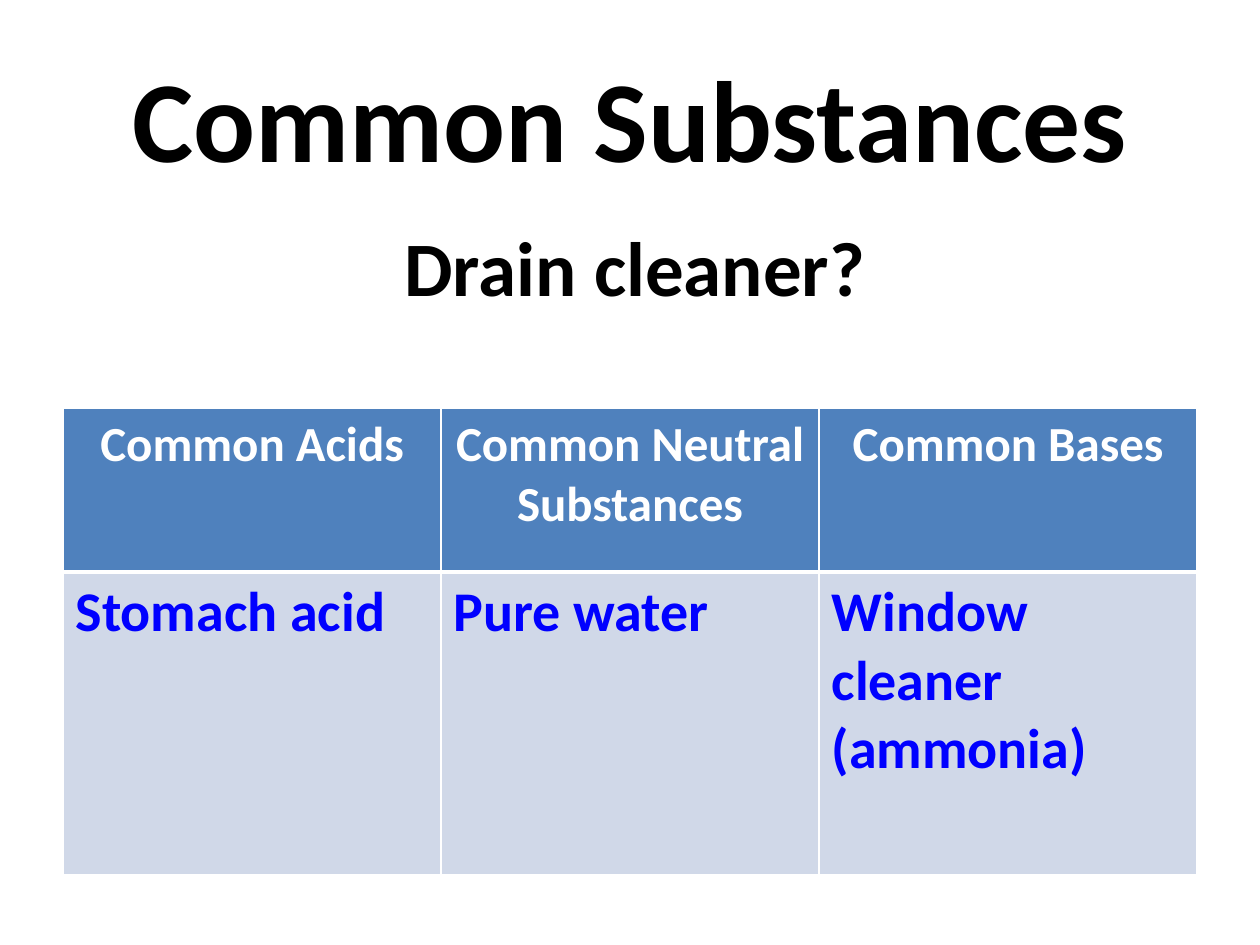
from dataclasses import dataclass

from lxml import etree
from pptx import Presentation
from pptx import util as u
from pptx.dml.color import RGBColor
from pptx.enum import text
from pptx.oxml import ns


@dataclass(frozen=True)
class Theme:
    font: str = "Calibri"
    black: str = "000000"
    white: str = "FFFFFF"
    header_fill: str = "4F81BD"
    body_fill: str = "D0D8E8"
    body_text: str = "0000FF"
    title_size: int = 66
    question_size: int = 44
    header_size: int = 28
    body_size: int = 32
    thin: int = 1
    thick: int = 3


class SlideBuilder:
    def __init__(self, slide, theme):
        self.s = slide
        self.theme = theme

    def add_words(self, tf, words, size, color, align):
        p = tf.paragraphs[0]
        p.alignment = align
        r = p.add_run()
        r.text = words
        style = {"name": self.theme.font, "size": u.Pt(size), "bold": True}
        for name, value in style.items():
            setattr(r.font, name, value)
        r.font.color.rgb = RGBColor.from_string(color)

    def text_box(self, words, at, size, **frame):
        tf = self.s.shapes.add_textbox(*map(u.Inches, at)).text_frame
        for name, value in {"word_wrap": True, **frame}.items():
            setattr(tf, name, value)
        self.add_words(tf, words, size, self.theme.black, text.PP_ALIGN.CENTER)

    def borders(self, cell, widths):
        """Draw white cell edges; widths maps L, R, T, B to points."""
        tc_pr = cell._tc.get_or_add_tcPr()
        for side, width in widths.items():
            ln = etree.SubElement(tc_pr, ns.qn(f"a:ln{side}"), w=str(u.Pt(width)))
            fill = etree.SubElement(ln, ns.qn("a:solidFill"))
            etree.SubElement(fill, ns.qn("a:srgbClr"), val=self.theme.white)

    def table(self, header, body, at, heights):
        t = self.theme
        table = self.s.shapes.add_table(2, len(header), *map(u.Inches, at)).table
        rows = (
            (header, t.header_size, t.white, t.header_fill,
             text.PP_ALIGN.CENTER, {"T": t.thin, "B": t.thick}),
            (body, t.body_size, t.body_text, t.body_fill,
             text.PP_ALIGN.LEFT, {"T": t.thick, "B": t.thin}),
        )
        for row, height, (labels, size, color, fill, align, edges) in zip(
                table.rows, heights, rows):
            row.height = u.Inches(height)
            for cell, label in zip(row.cells, labels):
                self.add_words(cell.text_frame, label, size, color, align)
                self.borders(cell, {"L": t.thin, "R": t.thin, **edges})
                cell.fill.solid()
                cell.fill.fore_color.rgb = RGBColor.from_string(fill)


def main():
    prs = Presentation()
    prs.slide_width, prs.slide_height = u.Inches(10), u.Inches(7.5)
    theme = Theme()
    slide = SlideBuilder(prs.slides.add_slide(prs.slide_layouts[6]), theme)

    slide.text_box("Common Substances", (0.5, 0.3, 9, 1.25), theme.title_size,
                   vertical_anchor=text.MSO_ANCHOR.MIDDLE)
    slide.table(
        ("Common Acids", "Common Neutral Substances", "Common Bases"),
        ("Stomach acid", "Pure water", "Window cleaner (ammonia)"),
        (0.5, 3.24, 9, 3.7), (1.3, 2.4))
    slide.text_box("Drain cleaner?", (2.42, 1.69, 5.24, 0.84), theme.question_size,
                   auto_size=text.MSO_AUTO_SIZE.SHAPE_TO_FIT_TEXT)
    prs.save("out.pptx")


if __name__ == "__main__":
    main()
